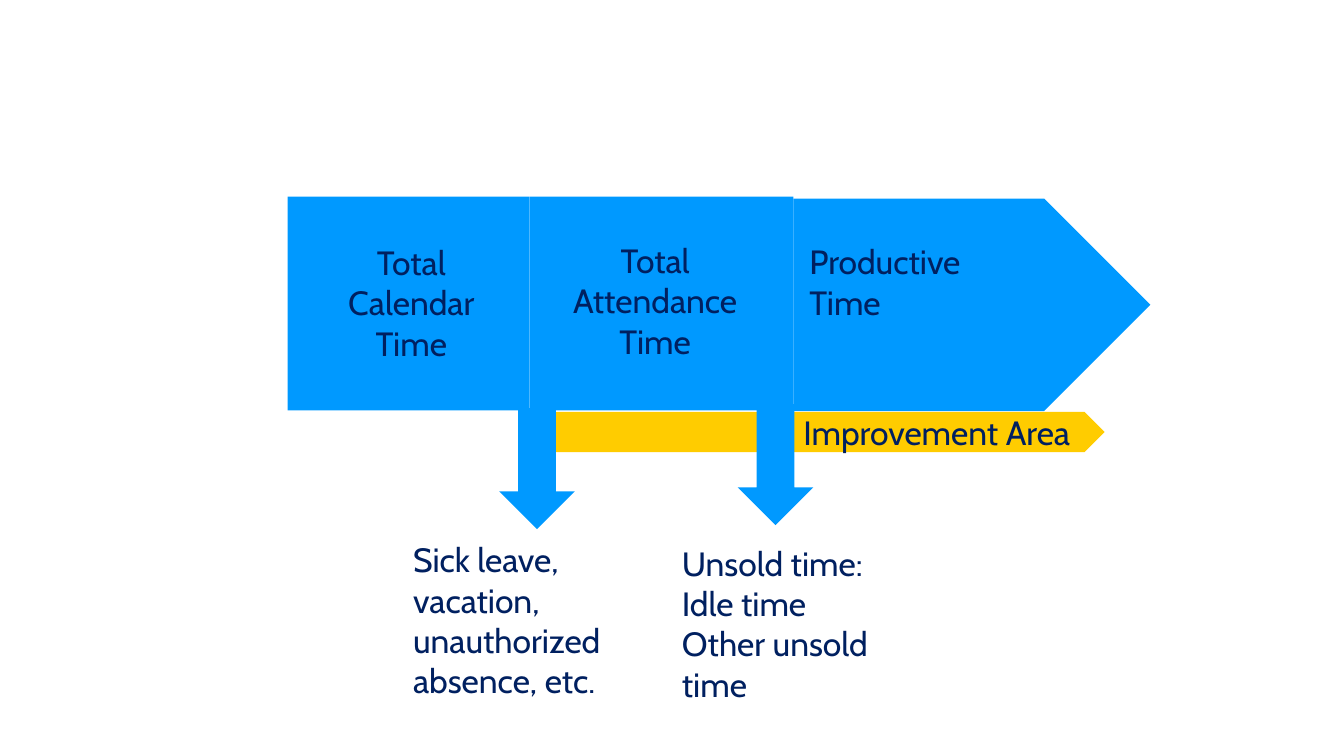
from pptx import Presentation
from pptx.dml.color import RGBColor
from pptx.enum.shapes import MSO_SHAPE as Preset
from pptx.enum.text import MSO_ANCHOR as Anchor, MSO_AUTO_SIZE as AutoSize, PP_ALIGN as Align
from pptx.util import Pt

BLUE, YELLOW, NAVY = "0099FF", "FFCC00", "002060"


def color(hex_value):
    return RGBColor.from_string(hex_value)


def write(paragraph, text, font="Cabin", size=24, fill=NAVY, align=Align.LEFT):
    paragraph.text = text
    paragraph.alignment = align
    paragraph.font.name = font
    paragraph.font.size = Pt(size)
    paragraph.font.color.rgb = color(fill)


class TimeSlide:
    def __init__(self, presentation):
        self.slide = presentation.slides.add_slide(presentation.slide_layouts[6])

    def block(self, preset, left, top, width, height, fill=BLUE):
        shape = self.slide.shapes.add_shape(preset, Pt(left), Pt(top), Pt(width), Pt(height))
        shape.shadow.inherit = False
        shape.fill.solid()
        shape.fill.fore_color.rgb = color(fill)
        shape.line.fill.background()

    def label(self, lines, left, top, width, height, **style):
        box = self.slide.shapes.add_textbox(Pt(left), Pt(top), Pt(width), Pt(height))
        frame = box.text_frame
        frame.word_wrap = True
        frame.auto_size = AutoSize.SHAPE_TO_FIT_TEXT
        frame.vertical_anchor = Anchor.TOP
        for index, line in enumerate(lines):
            paragraph = frame.add_paragraph() if index else frame.paragraphs[0]
            write(paragraph, line, **style)


def main():
    presentation = Presentation()
    presentation.slide_width, presentation.slide_height = Pt(960), Pt(540)
    page = TimeSlide(presentation)

    # Time bar and improvement strip
    page.block(Preset.RECTANGLE, 205.4, 140.5, 172.7, 152.7)
    page.block(Preset.RECTANGLE, 378.1, 140.5, 188.6, 152.7)
    page.block(Preset.PENTAGON, 566.7, 141.8, 255, 151.8)
    page.block(Preset.PENTAGON, 393.1, 294.2, 396, 28.8, fill=YELLOW)

    # Labels on the bar and strip
    page.label(["Total Calendar Time"], 229, 169.2, 129.6, 94.5, align=Align.CENTER)
    page.label(["Total Attendance Time"], 396, 167.8, 144, 94.5, align=Align.CENTER)
    page.label(["Productive Time"], 571, 168.8, 126, 65.4)
    page.label(["Improvement Area"], 566.7, 291, 258.5, 36.4)

    # Time losses: arrows and their explanations
    page.block(Preset.DOWN_ARROW, 356.6, 291.6, 54, 86.4)
    page.block(Preset.DOWN_ARROW, 526.9, 288.7, 54, 86.4)
    page.label(["Sick leave, vacation, unauthorized absence, etc."], 288, 381.6, 158.4, 123.6)
    page.label(["Unsold time:", "Idle time", "Other unsold time"], 480, 384, 158.4, 123.6)

    presentation.save("out.pptx")


if __name__ == "__main__":
    main()
